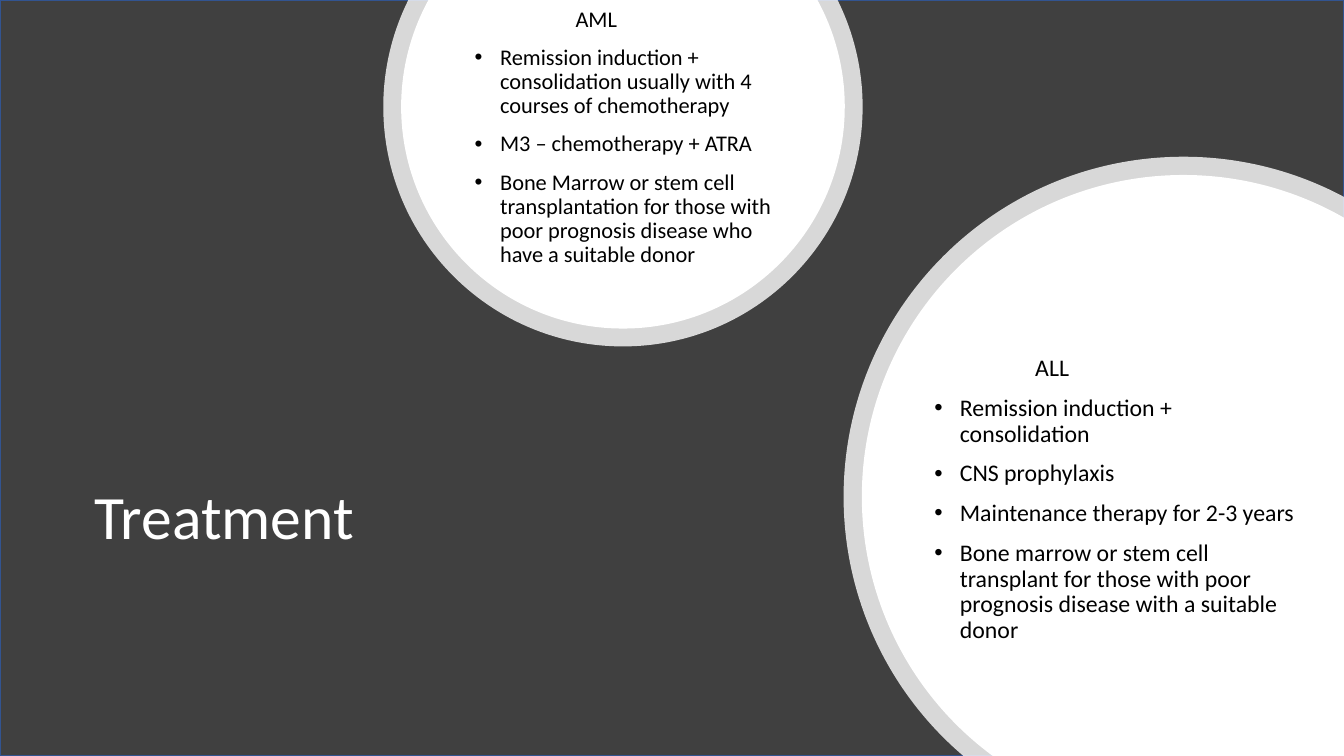
import math
from lxml import etree
from pptx import Presentation
from pptx.dml.color import RGBColor
from pptx.enum.shapes import MSO_SHAPE
from pptx.enum.text import MSO_ANCHOR, MSO_AUTO_SIZE, PP_ALIGN
from pptx.oxml.ns import qn
from pptx.util import Cm, Pt

RECT = MSO_SHAPE.RECTANGLE
MIDDLE, LEFT, NO_FIT = MSO_ANCHOR.MIDDLE, PP_ALIGN.LEFT, MSO_AUTO_SIZE.NONE
WHITE = RGBColor(0xFF, 0xFF, 0xFF)
BLACK = RGBColor(0, 0, 0)
CHARCOAL = RGBColor(0x40, 0x40, 0x40)
BLUE = RGBColor(0x32, 0x54, 0x91)
WIDTH, HEIGHT = 33.87, 19.05
QUARTER = math.pi / 2


def add_disc(cx, cy, radius, at_top, alpha=None):
    """Add a white disc cut by the top edge or by the bottom right corner."""
    if at_top:
        start = math.asin(-cy / radius)
        end = math.pi - start
        corners = []
    else:
        start = math.pi - math.asin((HEIGHT - cy) / radius)
        end = 2 * math.pi - math.acos((WIDTH - cx) / radius)
        corners = [(Cm(WIDTH), Cm(HEIGHT))]
    stops = [start, *[n * QUARTER for n in range(4) if start < n * QUARTER < end], end]

    # Each arc needs two control points and an end point
    points = [(math.cos(start), math.sin(start))]
    for a, b in zip(stops, stops[1:]):
        k = 4 / 3 * math.tan((b - a) / 4)
        points += [(math.cos(a) - k * math.sin(a), math.sin(a) + k * math.cos(a)),
                   (math.cos(b) + k * math.sin(b), math.sin(b) - k * math.cos(b)),
                   (math.cos(b), math.sin(b))]
    outline = [(Cm(cx + radius * x), Cm(cy + radius * y)) for x, y in points]
    builder = s.shapes.build_freeform(*outline[0])
    builder.add_line_segments(outline[1:] + corners, close=True)
    sp = builder.convert_to_shape()

    # Turn each three line segments of the arc into one curve
    lines = list(sp.element.iter(qn("a:lnTo")))
    for i in range(0, len(outline) - 1, 3):
        curve = etree.Element(qn("a:cubicBezTo"))
        lines[i].addprevious(curve)
        for line in lines[i:i + 3]:
            curve.append(line[0])
            line.getparent().remove(line)

    sp.shadow.inherit = False
    sp.fill.solid()
    sp.fill.fore_color.rgb = WHITE
    sp.line.fill.background()
    if alpha:
        color = sp.element.spPr.find(f"{qn('a:solidFill')}/{qn('a:srgbClr')}")
        etree.SubElement(color, qn("a:alpha"), val=str(alpha * 1000))


def write_text(sp, box, lines, size, color, bullets=True):
    """Place a text shape in front; a bulleted one starts with an indented heading."""
    s.shapes.element.append(sp.element)
    sp.left, sp.top, sp.width, sp.height = [Cm(v) for v in box]
    tf = sp.text_frame
    for name, value in {"word_wrap": True, "auto_size": NO_FIT,
                        "vertical_anchor": MIDDLE}.items():
        setattr(tf, name, value)
    for i, line in enumerate(lines):
        p = tf.paragraphs[0] if i == 0 else tf.add_paragraph()
        p.alignment, p.line_spacing = LEFT, 0.9
        p.space_before = Pt(10 if bullets else 0)
        r = p.add_run()
        r.text = line
        for name, value in {"name": "Calibri", "size": Pt(size)}.items():
            setattr(r.font, name, value)
        r.font.color.rgb = color
        if not bullets:
            continue
        pPr = p._p.get_or_add_pPr()
        pPr.set("marL", str(Cm(0.64 if i else 2.54)))
        pPr.set("indent", str(Cm(-0.64 if i else 0)))
        if i:
            etree.SubElement(pPr, qn("a:buFont"), typeface="Arial")
            etree.SubElement(pPr, qn("a:buChar"), char="•")
        else:
            etree.SubElement(pPr, qn("a:buNone"))


prs = Presentation()
prs.slide_width, prs.slide_height = Cm(WIDTH), Cm(HEIGHT)
s = prs.slides.add_slide(prs.slide_layouts[1])
title, aml = s.placeholders

# Dark background panel
panel = s.shapes.add_shape(RECT, 0, 0, Cm(WIDTH), Cm(HEIGHT))
panel.shadow.inherit = False
panel.fill.solid()
panel.fill.fore_color.rgb = CHARCOAL
panel.line.color.rgb = BLUE
panel.line.width = Pt(1)

# Title
write_text(title, (2.13, 9.73, 16.81, 6.73), ["Treatment"], 44, WHITE, bullets=False)

# Translucent rims
add_disc(15.7, 2.69, 6.04, at_top=True, alpha=80)
add_disc(29.83, 12.52, 8.57, at_top=False, alpha=80)

# AML disc and list
add_disc(15.7, 2.69, 5.59, at_top=True)
write_text(aml, (11.71, 0.98, 8, 4.98), [
    "AML",
    "Remission induction + consolidation usually with 4 courses of chemotherapy",
    "M3 – chemotherapy + ATRA",
    "Bone Marrow or stem cell transplantation for those with poor prognosis "
    "disease who have a suitable donor",
], 16, BLACK)

# ALL disc and list
add_disc(29.83, 12.52, 8.11, at_top=False)
all_list = s.shapes.add_textbox(0, 0, 0, 0)
write_text(all_list, (23.3, 8.74, 9.65, 7.72), [
    "ALL",
    "Remission induction + consolidation",
    "CNS prophylaxis",
    "Maintenance therapy for 2-3 years",
    "Bone marrow or stem cell transplant for those with poor prognosis "
    "disease with a suitable donor",
], 17, BLACK)

prs.save("out.pptx")
